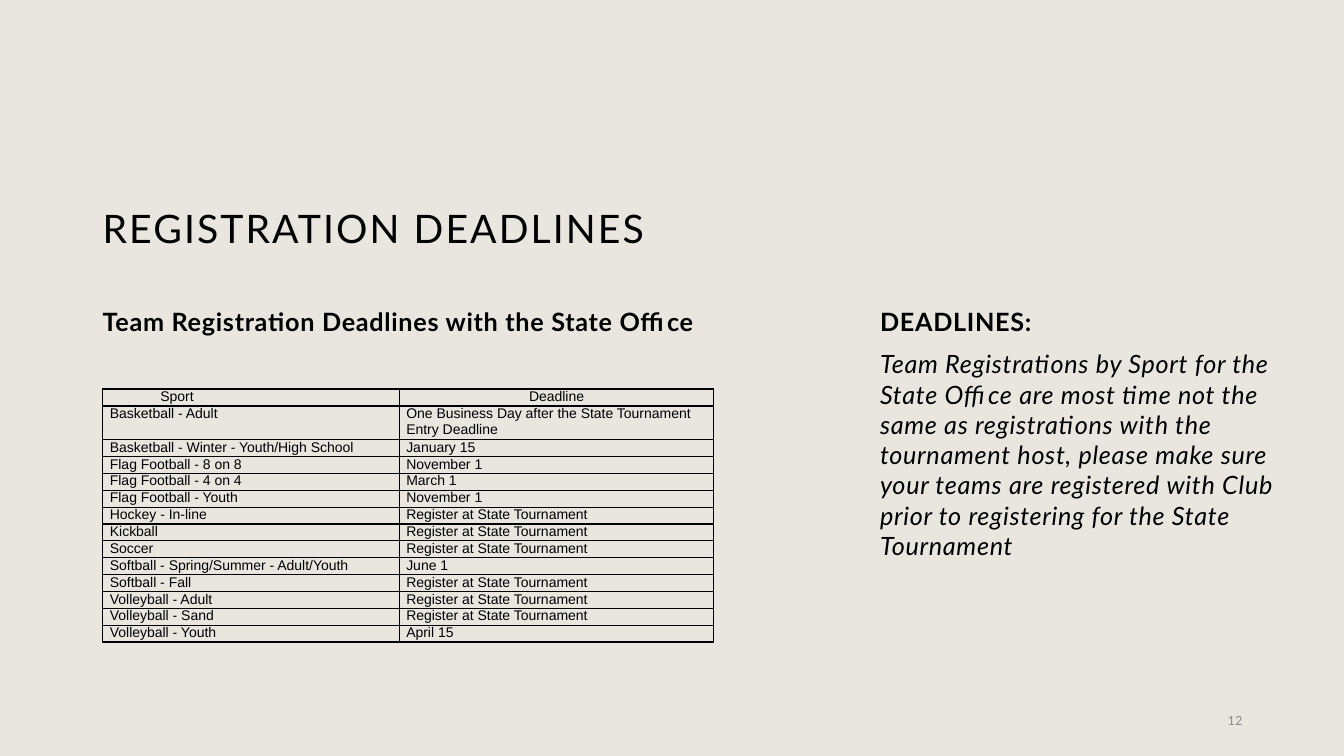
from pptx import Presentation
from pptx import util as u
from pptx.dml.color import RGBColor
from pptx.enum import text
from pptx.oxml import parse_xml
from pptx.oxml.ns import nsdecls

COLORS = {"background": "E9E6DF", "ink": "000000", "muted": "8C8C8C"}
AT_STATE = "Register at State Tournament"
DEADLINES = [
    ("\tSport", "Deadline"),
    ("Basketball - Adult", "One Business Day after the State Tournament Entry Deadline"),
    ("Basketball - Winter - Youth/High School", "January 15"),
    ("Flag Football - 8 on 8", "November 1"),
    ("Flag Football - 4 on 4", "March 1"),
    ("Flag Football - Youth", "November 1"),
    ("Hockey - In-line", AT_STATE),
    ("Kickball", AT_STATE),
    ("Soccer", AT_STATE),
    ("Softball - Spring/Summer - Adult/Youth", "June 1"),
    ("Softball - Fall", AT_STATE),
    ("Volleyball - Adult", AT_STATE),
    ("Volleyball - Sand", AT_STATE),
    ("Volleyball - Youth", "April 15"),
]


class Deck:
    def __init__(self):
        self.prs = Presentation()
        self.prs.slide_width = u.Inches(13.33)
        self.prs.slide_height = u.Inches(7.5)
        self.s = self.prs.slides.add_slide(self.prs.slide_layouts[6])
        fill = self.s.background.fill
        fill.solid()
        fill.fore_color.rgb = RGBColor.from_string(COLORS["background"])

    def font(self, p, size, name="Lato", color="ink", bold=False, italic=False):
        f = p.font
        f.size, f.name, f.bold, f.italic = u.Pt(size), name, bold, italic
        f.color.rgb = RGBColor.from_string(COLORS[color])

    def text(self, words, box, size, anchor=text.MSO_ANCHOR.MIDDLE, align=text.PP_ALIGN.LEFT,
             line=1.0, before=0, tracking=0, top=0.05, **style):
        sp = self.s.shapes.add_textbox(*map(u.Inches, box))
        tf = sp.text_frame
        tf.word_wrap = True
        tf.vertical_anchor = anchor
        tf.margin_top = u.Inches(top)
        p = tf.paragraphs[0]
        r = p.add_run()
        r.text = words
        p.alignment, p.line_spacing, p.space_before = align, line, u.Pt(before)
        self.font(p, size, **style)
        if tracking:
            r.font._element.set("spc", str(int(tracking * 100)))

    def border(self, cell):
        tcPr = cell._tc.get_or_add_tcPr()
        for i, side in enumerate(("lnL", "lnR", "lnT", "lnB")):
            tcPr.insert(i, parse_xml(
                f'<a:{side} {nsdecls("a")} w="12700"><a:solidFill>'
                f'<a:srgbClr val="{COLORS["ink"]}"/></a:solidFill></a:{side}>'))

    def table(self, rows, left, top, widths, row_height):
        frame = self.s.shapes.add_table(
            len(rows), len(widths), u.Inches(left), u.Inches(top),
            u.Inches(sum(widths)), u.Inches(row_height * len(rows)))
        tbl = frame.table
        tbl.first_row = tbl.horz_banding = False
        for col, width in zip(tbl.columns, widths):
            col.width = u.Inches(width)
        for i, row in enumerate(rows):
            for j, words in enumerate(row):
                cell = tbl.cell(i, j)
                cell.fill.background()
                cell.margin_left = cell.margin_right = u.Inches(0.07)
                cell.margin_top = cell.margin_bottom = 0
                p = cell.text_frame.paragraphs[0]
                p.text = words
                self.font(p, 10, name="Arial")
                self.border(cell)
        tbl.cell(0, 1).text_frame.paragraphs[0].alignment = text.PP_ALIGN.CENTER


def main():
    d = Deck()
    heading = dict(size=18, line=0.9, before=10, tracking=0.5, bold=True)
    d.text("REGISTRATION DEADLINES", (0.92, 0.37, 6.18, 2.18), 28,
           anchor=text.MSO_ANCHOR.BOTTOM, line=0.9, tracking=1.5)
    d.text("Team Registration Deadlines with the State Office", (0.92, 2.96, 6.27, 0.49), **heading)
    d.table(DEADLINES, 1.02, 3.86, (2.94, 3.12), 0.15)
    d.text("DEADLINES:", (8.63, 2.96, 4.31, 0.49), **heading)
    d.text("Team Registrations by Sport for the State Office are most time not the same as "
           "registrations with the tournament host, please make sure your teams are registered "
           "with Club prior to registering for the State Tournament",
           (8.63, 3.46, 4.31, 3.32), 18, anchor=text.MSO_ANCHOR.TOP, before=10,
           tracking=0.5, top=0, italic=True)
    d.text("12", (9.42, 6.95, 3, 0.4), 9, align=text.PP_ALIGN.RIGHT, color="muted")
    d.prs.save("out.pptx")


if __name__ == "__main__":
    main()
